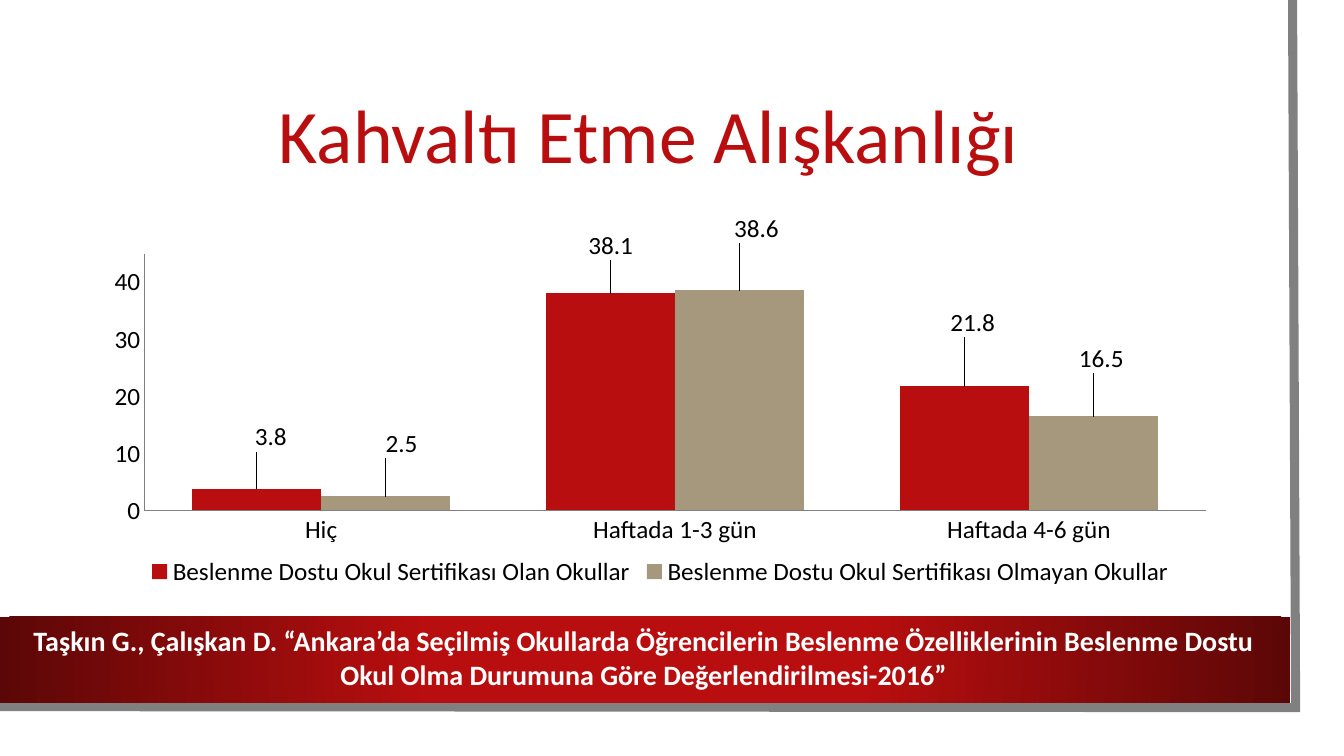
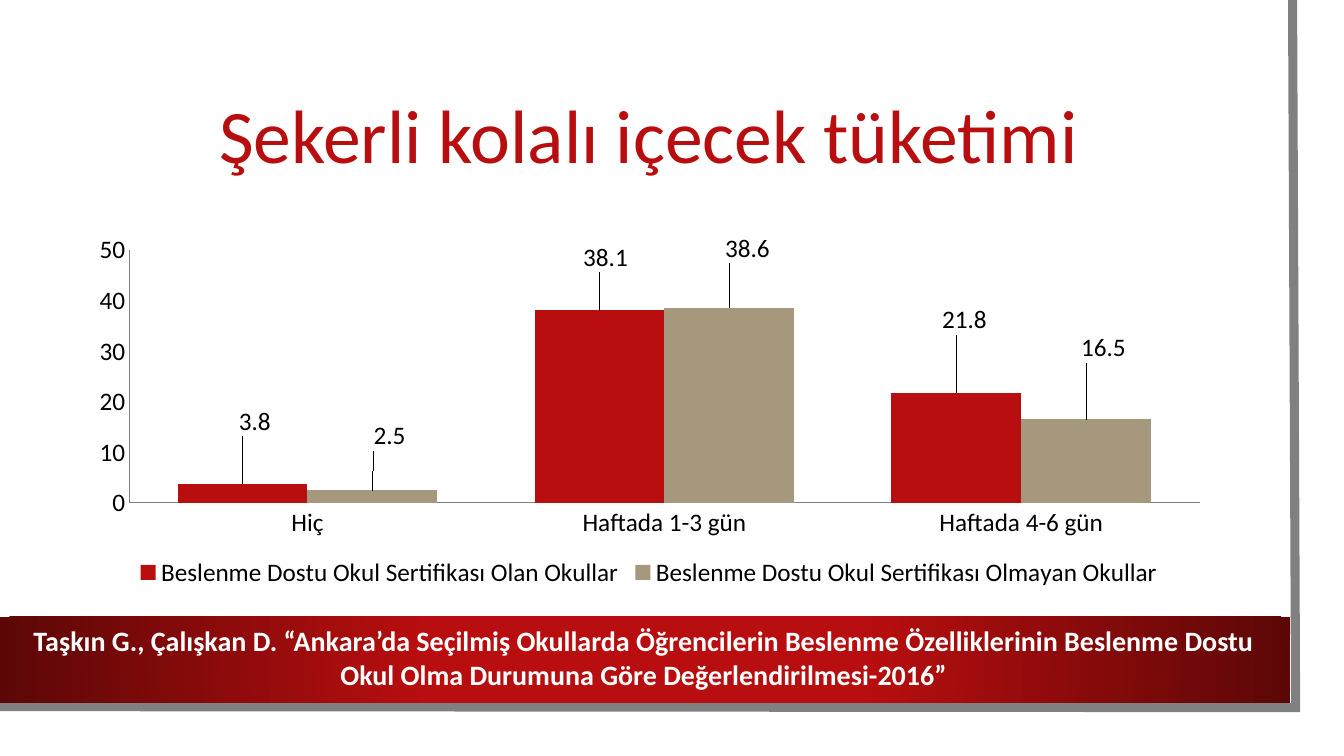
from dataclasses import dataclass
from itertools import product
from pptx import Presentation
from pptx.chart.data import CategoryChartData as ChartData
from pptx.dml.color import RGBColor as RGB
from pptx.enum.chart import XL_CHART_TYPE as Kind, XL_LABEL_POSITION as Spot
from pptx.enum.chart import XL_LEGEND_POSITION as Side, XL_TICK_MARK as Tick
from pptx.enum.shapes import MSO_SHAPE as Form
from pptx.enum.text import MSO_ANCHOR as Anchor, PP_ALIGN as Align
from pptx.oxml import parse_xml
from pptx.oxml.ns import nsdecls, qn
from pptx.util import Pt

SCALE = 9144


@dataclass(frozen=True)
class Theme:
    """Colours, typeface and type sizes of the deck."""
    font: str = "Calibri"
    red: str = "B80E0F"
    dark: str = "5C0707"
    sand: str = "A6987D"
    gray: str = "808080"
    white: str = "FFFFFF"
    black: str = "000000"
    title: int = 54
    body: int = 18
    source: int = 20
    edge: float = 6.5


def emu(*px):
    """Turn px lengths into EMU."""
    return [n * SCALE for n in px]


def layout(size, spans, inner=False):
    """Build a manual chart layout from px lengths in x, y, w, h order."""
    head = '<c:layoutTarget val="inner"/><c:xMode val="edge"/><c:yMode val="edge"/>' if inner else ""
    body = "".join(f'<c:{key} val="{n / full:.4f}"/>' for key, n, full in zip("xywh", spans, size * 2))
    return parse_xml(f'<c:layout {nsdecls("c")}><c:manualLayout>{head}{body}</c:manualLayout></c:layout>')


class Deck:
    """Holds the theme and the current slide."""

    def __init__(self, theme):
        """Open an empty wide deck."""
        self.theme = theme
        self.show = Presentation()
        self.show.slide_width, self.show.slide_height = emu(1333, 750)

    def style(self, font, size, color, bold=False):
        """Set typeface, size, colour and weight."""
        font.name, font.size, font.bold = self.theme.font, Pt(size), bold
        font.color.rgb = RGB.from_string(color)

    def page(self, title, source):
        """Add a slide with its frame, title and source band."""
        t = self.theme
        self.slide = self.show.slides.add_slide(self.show.slide_layouts[6])
        self.rect(0, 0, 1310, 727)
        self.edge((1282, 0), (1285, 702), (-3, 701))
        self.glow(self.rect(0, 612, 1280, 85))
        self.text(title, (75, 75, 1137, 126), t.title, t.red, Anchor.MIDDLE, 0.9)
        self.text(source, (0, 614, 1277, 77), t.source, t.white, bold=True)

    def rect(self, *box):
        """Add a plain white panel."""
        panel = self.slide.shapes.add_shape(Form.RECTANGLE, *emu(*box))
        panel.shadow.inherit = False
        panel.fill.solid()
        panel.fill.fore_color.rgb = RGB.from_string(self.theme.white)
        panel.line.fill.background()
        return panel

    def glow(self, panel):
        """Fill a panel with the red gradient, dark at its rim."""
        t = self.theme
        stops = "".join(f'<a:gs pos="{p}000"><a:srgbClr val="{c}"/></a:gs>'
                        for p, c in ((34, t.red), (100, t.dark)))
        grad = parse_xml(
            f'<a:gradFill {nsdecls("a")} rotWithShape="1"><a:gsLst>{stops}</a:gsLst><a:path path="circle">'
            '<a:fillToRect l="50000" t="50000" r="50000" b="50000"/></a:path></a:gradFill>')
        props = panel.element.spPr
        props.replace(props.find(qn("a:solidFill")), grad)

    def edge(self, start, *rest):
        """Draw the gray rim along the right and the bottom."""
        pen = self.slide.shapes.build_freeform(*start, scale=SCALE)
        pen.add_line_segments(rest, close=False)
        rim = pen.convert_to_shape()
        rim.shadow.inherit = False
        rim.fill.background()
        rim.line.color.rgb = RGB.from_string(self.theme.gray)
        rim.line.width = Pt(self.theme.edge)
        rim.element.spPr.find(qn("a:ln")).append(parse_xml(f'<a:miter {nsdecls("a")} lim="800000"/>'))

    def text(self, words, box, size, color, anchor=Anchor.TOP, space=1.0, bold=False):
        """Add a centred text box."""
        frame = self.slide.shapes.add_textbox(*emu(*box)).text_frame
        frame.word_wrap, frame.vertical_anchor = True, anchor
        frame.text = words
        para = frame.paragraphs[0]
        para.alignment, para.line_spacing = Align.CENTER, space
        self.style(para.runs[0].font, size, color, bold)

    def axis(self, axis):
        """Give an axis a thin gray line without ticks or grid."""
        axis.has_major_gridlines = False
        axis.major_tick_mark = axis.minor_tick_mark = Tick.NONE
        axis.format.line.color.rgb = RGB.from_string(self.theme.gray)
        axis.format.line.width = Pt(0.75)

    def chart(self, cats, rows, box, plot, top, shifts):
        """Add a column chart with shifted value labels."""
        t = self.theme
        data = ChartData()
        data.categories = cats
        for name, vals in rows:
            data.add_series(name, vals)
        chart = self.slide.shapes.add_chart(Kind.COLUMN_CLUSTERED, *emu(*box), data).chart
        self.style(chart.font, t.body, t.black)
        chart.has_title = False
        chart.has_legend = True
        chart.legend.position, chart.legend.include_in_layout = Side.BOTTOM, False
        for axis in (chart.category_axis, chart.value_axis):
            self.axis(axis)
        scale = chart.value_axis
        scale.minimum_scale, scale.maximum_scale, scale.major_unit = 0, top, 10
        bars = chart.plots[0]
        bars.gap_width, bars.overlap, bars.vary_by_categories = 75, 0, False
        for ser, color in zip(bars.series, (t.red, t.sand)):
            ser.format.fill.solid()
            ser.format.fill.fore_color.rgb = RGB.from_string(color)
        for ser, i in product(bars.series, range(len(cats))):
            ser.points[i].data_label.position = Spot.OUTSIDE_END
        size = box[2:]
        for label, shift in zip(chart.element.iter(qn("c:dLbl")), shifts):
            label.find(qn("c:idx")).addnext(layout(size, shift))
        area = next(chart.element.iter(qn("c:plotArea")))
        for old in area.findall(qn("c:layout")):
            area.remove(old)
        area.insert(0, layout(size, plot, inner=True))


def main():
    """Build both slides and save them."""
    source = ("Taşkın G., Çalışkan D. “Ankara’da Seçilmiş Okullarda Öğrencilerin Beslenme Özelliklerinin "
              "Beslenme Dostu Okul Olma Durumuna Göre Değerlendirilmesi-2016”")
    cats = ("Hiç", "Haftada 1-3 gün", "Haftada 4-6 gün")
    rows = (("Beslenme Dostu Okul Sertifikası Olan Okullar", (3.8, 38.1, 21.8)),
            ("Beslenme Dostu Okul Sertifikası Olmayan Okullar", (2.5, 38.6, 16.5)))
    pages = (
        ("Kahvaltı Etme Alışkanlığı", (92, 212, 1126, 375), (51, 34, 1053, 259), 45,
         ((14, -33), (0, -29), (8, -45), (16, -34), (17, -43), (8, -39))),
        ("Şekerli kolalı içecek tüketimi", (75, 226, 1137, 362), (53, 22, 1062, 251), 50,
         ((12, -43), (6, -33), (8, -53), (17, -35), (18, -40), (17, -52))),
    )
    deck = Deck(Theme())
    for title, *spot in pages:
        deck.page(title, source)
        deck.chart(cats, rows, *spot)
    deck.show.save("out.pptx")


if __name__ == "__main__":
    main()
